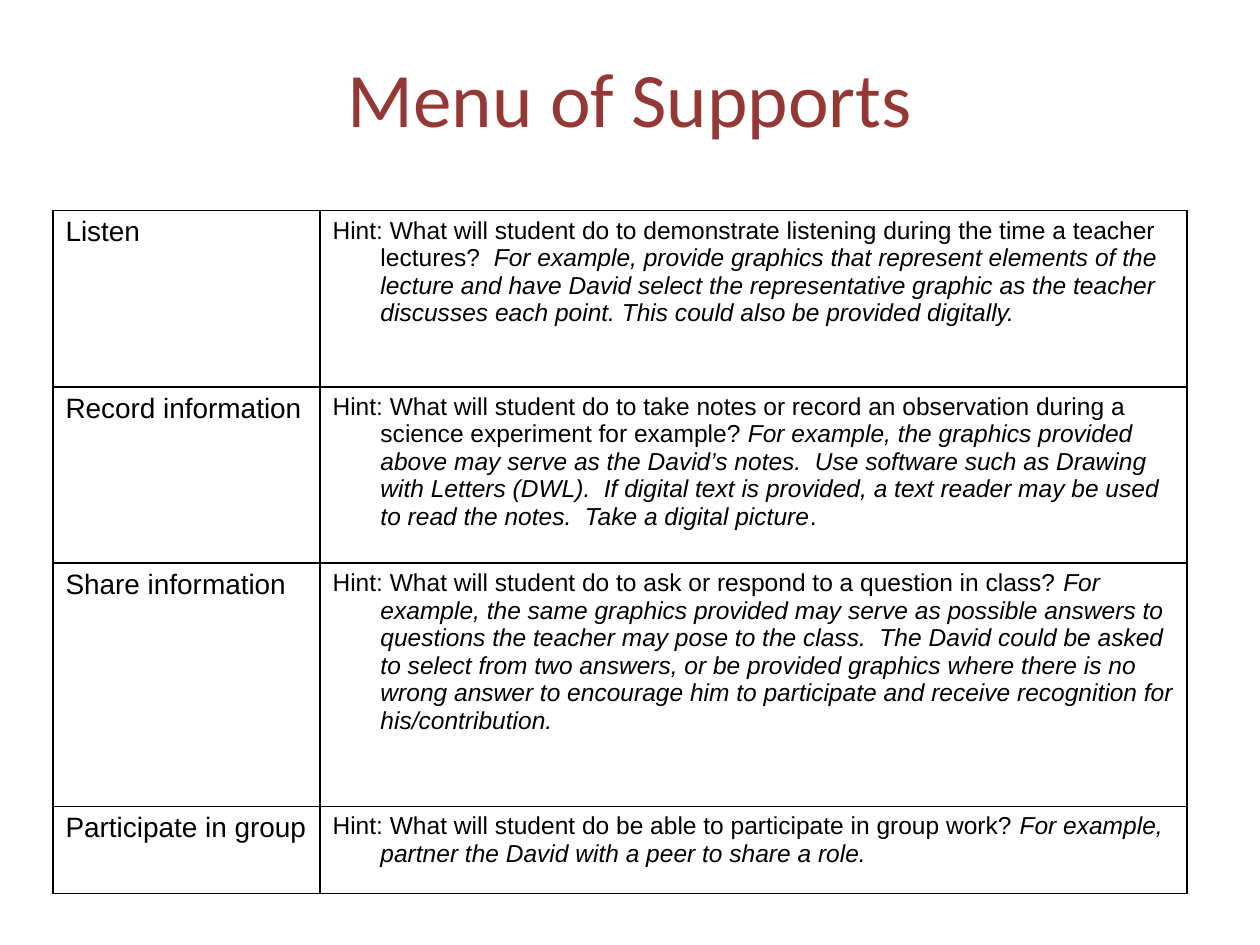
from dataclasses import dataclass

from lxml import etree
from pptx import Presentation
from pptx import util as u
from pptx.dml.color import RGBColor
from pptx.enum import text
from pptx.oxml import ns

# Content: each support, then its hint as (words, italic) spans
TITLE = "Menu of Supports"
SUPPORTS = [
    ("Listen", [
        ("Hint: What will student do to demonstrate listening during the time "
         "a teacher lectures?  ", False),
        ("For example, provide graphics that represent elements of the lecture "
         "and have David select the representative graphic as the teacher "
         "discusses each point. This could also be provided digitally.", True)]),
    ("Record information", [
        ("Hint: What will student do to take notes or record an observation "
         "during a science experiment for example? ", False),
        ("For example, the graphics provided above may serve as the David’s "
         "notes.  Use software such as Drawing with Letters (DWL).  If digital "
         "text is provided, a text reader may be used to read the notes.  "
         "Take a digital picture", True),
        (".", False)]),
    ("Share information", [
        ("Hint: What will student do to ask or respond to a question in class? ",
         False),
        ("For example, the same graphics provided may serve as possible answers "
         "to questions the teacher may pose to the class.  The David could be "
         "asked to select from two answers, or be provided graphics where there "
         "is no wrong answer to encourage him to participate and receive "
         "recognition for his/contribution.", True)]),
    ("Participate in group", [
        ("Hint: What will student do be able to participate in group work? ",
         False),
        ("For example, partner the David with a peer to share a role.", True)]),
]
COLUMN_WIDTHS = [2.12, 6.88]
ROW_HEIGHTS = [1.4, 1.4, 1.93, 0.69]


@dataclass(frozen=True)
class Theme:
    title_font: str = "Calibri"
    body_font: str = "Arial"
    title_color: str = "953735"
    ink: str = "000000"
    title_size: int = 44
    label_size: int = 16
    hint_size: int = 14
    border: int = 1
    indent: float = 0.38


THEME = Theme()


def add_span(para, words, font, size, color, italic=False):
    span = para.add_run()
    span.text = words
    span.font.name = font
    span.font.size = u.Pt(size)
    span.font.color.rgb = RGBColor.from_string(color)
    span.font.italic = italic


def add_border(cell):
    properties = cell._tc.get_or_add_tcPr()
    for position, side in enumerate(("lnL", "lnR", "lnT", "lnB")):
        line = etree.Element(ns.qn(f"a:{side}"), w=str(u.Pt(THEME.border)))
        fill = etree.SubElement(line, ns.qn("a:solidFill"))
        etree.SubElement(fill, ns.qn("a:srgbClr"), val=THEME.ink)
        properties.insert(position, line)


def fill_cell(cell, spans, size):
    cell.fill.background()
    add_border(cell)
    para = cell.text_frame.paragraphs[0]
    hanging = u.Inches(THEME.indent)
    properties = para._p.get_or_add_pPr()
    properties.set("marL", str(hanging))
    properties.set("indent", str(-hanging))
    for words, italic in spans:
        add_span(para, words, THEME.body_font, size, THEME.ink, italic)


def add_title(page):
    box = page.shapes.add_textbox(
        u.Inches(0.5), u.Inches(0.33), u.Inches(9), u.Inches(0.88))
    frame = box.text_frame
    frame.word_wrap = True
    frame.vertical_anchor = text.MSO_ANCHOR.MIDDLE
    para = frame.paragraphs[0]
    para.alignment = text.PP_ALIGN.CENTER
    add_span(para, TITLE, THEME.title_font, THEME.title_size, THEME.title_color)


def add_supports(page):
    table = page.shapes.add_table(
        len(SUPPORTS), len(COLUMN_WIDTHS), u.Inches(0.42), u.Inches(1.67),
        u.Inches(sum(COLUMN_WIDTHS)), u.Inches(sum(ROW_HEIGHTS))).table
    table.first_row = table.horz_banding = False
    for column, width in zip(table.columns, COLUMN_WIDTHS):
        column.width = u.Inches(width)
    for row, height, (label, hint) in zip(table.rows, ROW_HEIGHTS, SUPPORTS):
        row.height = u.Inches(height)
        fill_cell(row.cells[0], [(label, False)], THEME.label_size)
        fill_cell(row.cells[1], hint, THEME.hint_size)


def main():
    deck = Presentation()
    deck.slide_width, deck.slide_height = u.Inches(10), u.Inches(7.5)
    page = deck.slides.add_slide(deck.slide_layouts[6])
    add_title(page)
    add_supports(page)
    deck.save("out.pptx")


if __name__ == "__main__":
    main()
